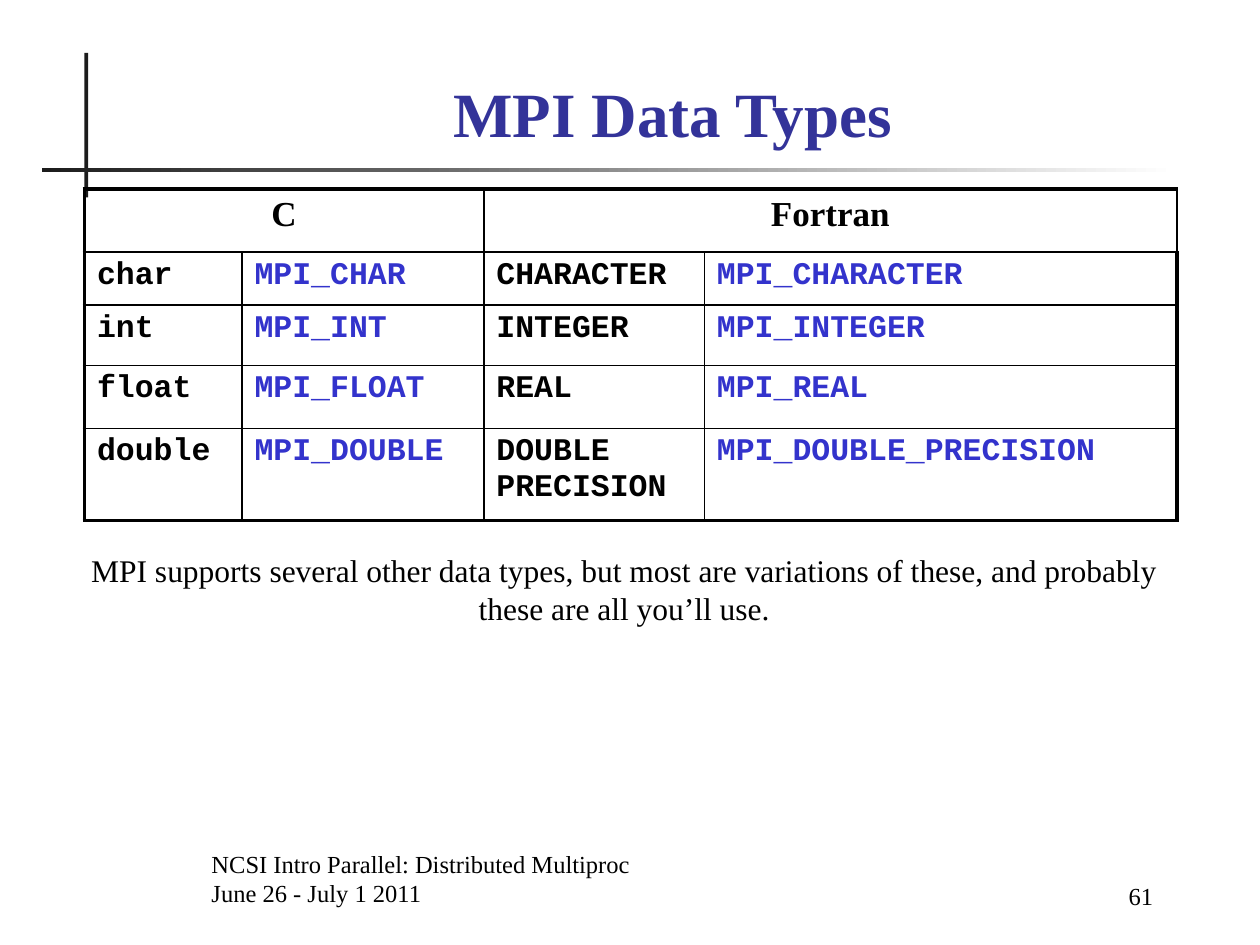
import dataclasses

import pptx
import pptx.dml.color
import pptx.enum.shapes
import pptx.enum.text
import pptx.oxml
import pptx.oxml.ns
import pptx.util

Inches, Pt = pptx.util.Inches, pptx.util.Pt
RGBColor = pptx.dml.color.RGBColor
ALIGN, ANCHOR = pptx.enum.text.PP_ALIGN, pptx.enum.text.MSO_ANCHOR

BLACK = RGBColor(0x00, 0x00, 0x00)
WHITE = RGBColor(0xFF, 0xFF, 0xFF)
RULE = RGBColor(0x1C, 0x1C, 0x1C)
TITLE = RGBColor(0x33, 0x33, 0x99)
MPI_BLUE = RGBColor(0x33, 0x33, 0xCC)

SERIF, MONO = "Times New Roman", "Courier New"
WIDTH, HEIGHT = 10, 7.5
OUTER, INNER = 2.25, 1


@dataclasses.dataclass
class Box:
    """Position and size as shares of the slide."""
    left: float
    top: float
    width: float
    height: float

    def emu(self) -> tuple:
        return (Inches(self.left * WIDTH), Inches(self.top * HEIGHT),
                Inches(self.width * WIDTH), Inches(self.height * HEIGHT))


@dataclasses.dataclass
class Note:
    box: Box
    lines: list
    size: int
    align: ALIGN
    anchor: ANCHOR


COLS = [1.25, 1.92, 1.75, 3.75]
ROWS = [0.5, 0.42, 0.48, 0.5, 0.73]
GROUPS = ["C", "Fortran"]
TYPES = [
    ("char", "MPI_CHAR", "CHARACTER", "MPI_CHARACTER"),
    ("int", "MPI_INT", "INTEGER", "MPI_INTEGER"),
    ("float", "MPI_FLOAT", "REAL", "MPI_REAL"),
    ("double", "MPI_DOUBLE", "DOUBLE PRECISION", "MPI_DOUBLE_PRECISION"),
]
NOTES = [
    Note(Box(0.158, 0.9, 0.608, 0.067),
         ["NCSI Intro Parallel: Distributed Multiproc", "June 26 - July 1 2011"],
         14, ALIGN.LEFT, ANCHOR.BOTTOM),
    Note(Box(0.783, 0.903, 0.142, 0.067), ["61"], 14, ALIGN.RIGHT, ANCHOR.BOTTOM),
    Note(Box(0.058, 0.577, 0.875, 0.12),
         ["MPI supports several other data types, but most are variations of "
          "these, and probably these are all you’ll use."],
         18, ALIGN.CENTER, ANCHOR.TOP),
]


def write(tf, lines: list, align: ALIGN, size: int, name: str = SERIF,
          color: RGBColor = BLACK, bold: bool = False) -> None:
    for i, line in enumerate(lines):
        p = tf.add_paragraph() if i else tf.paragraphs[0]
        p.alignment = align
        r = p.add_run()
        r.text = line
        for key, value in {"size": Pt(size), "name": name, "bold": bold}.items():
            setattr(r.font, key, value)
        r.font.color.rgb = color


def add_rule(s, box: Box, fade: bool) -> None:
    sp = s.shapes.add_shape(pptx.enum.shapes.MSO_SHAPE.RECTANGLE, *box.emu())
    sp.shadow.inherit = False
    sp.line.fill.background()
    if fade:
        sp.fill.gradient()
        sp.fill.gradient_angle = 0
        for stop, color in zip(sp.fill.gradient_stops, (RULE, WHITE)):
            stop.color.rgb = color
    else:
        sp.fill.solid()
        sp.fill.fore_color.rgb = RULE


def set_borders(cell, row: int, col: int) -> None:
    outer = {"L": col == 0, "R": col == len(COLS) - 1,
             "T": row == 0, "B": row == len(ROWS) - 1}
    tcPr = cell._tc.get_or_add_tcPr()
    for side, is_outer in outer.items():
        width = Pt(OUTER if is_outer else INNER)
        tcPr.append(pptx.oxml.parse_xml(
            f'<a:ln{side} {pptx.oxml.ns.nsdecls("a")} w="{width}"><a:solidFill>'
            f'<a:srgbClr val="{BLACK}"/></a:solidFill></a:ln{side}>'))


def add_types_table(s, box: Box) -> None:
    table = s.shapes.add_table(len(ROWS), len(COLS), *box.emu()).table
    table.first_row = table.horz_banding = False
    for column, width in zip(table.columns, COLS):
        column.width = Inches(width)
    for row, height in zip(table.rows, ROWS):
        row.height = Inches(height)

    for row in range(len(ROWS)):
        for col in range(len(COLS)):
            cell = table.cell(row, col)
            set_borders(cell, row, col)
            cell.fill.background()
            if row:
                write(cell.text_frame, [TYPES[row - 1][col]], ALIGN.LEFT, 18, MONO,
                      MPI_BLUE if col % 2 else BLACK, True)

    # Each language heading spans its type and MPI columns
    for i, group in enumerate(GROUPS):
        cell = table.cell(0, 2 * i)
        cell.merge(table.cell(0, 2 * i + 1))
        write(cell.text_frame, [group], ALIGN.CENTER, 20, bold=True)


def add_note(s, note: Note) -> None:
    tf = s.shapes.add_textbox(*note.box.emu()).text_frame
    tf.word_wrap = True
    tf.vertical_anchor = note.anchor
    write(tf, note.lines, note.align, note.size)


def main() -> None:
    prs = pptx.Presentation()
    prs.slide_width, prs.slide_height = Inches(WIDTH), Inches(HEIGHT)
    s = prs.slides.add_slide(prs.slide_layouts[5])

    # Crossed rules beside and below the title
    add_rule(s, Box(0.067, 0.056, 0.003, 0.153), fade=False)
    add_rule(s, Box(0.033, 0.178, 0.9, 0.004), fade=True)

    # Title
    title = s.shapes.title
    title.left, title.top, title.width, title.height = Box(
        0.108, 0.067, 0.852, 0.099).emu()
    title.text_frame.vertical_anchor = ANCHOR.BOTTOM
    write(title.text_frame, ["MPI Data Types"], ALIGN.CENTER, 36,
          color=TITLE, bold=True)

    # Table, remark and footer
    add_types_table(s, Box(0.067, 0.2, sum(COLS) / WIDTH, sum(ROWS) / HEIGHT))
    for note in NOTES:
        add_note(s, note)

    prs.save("out.pptx")


if __name__ == "__main__":
    main()
